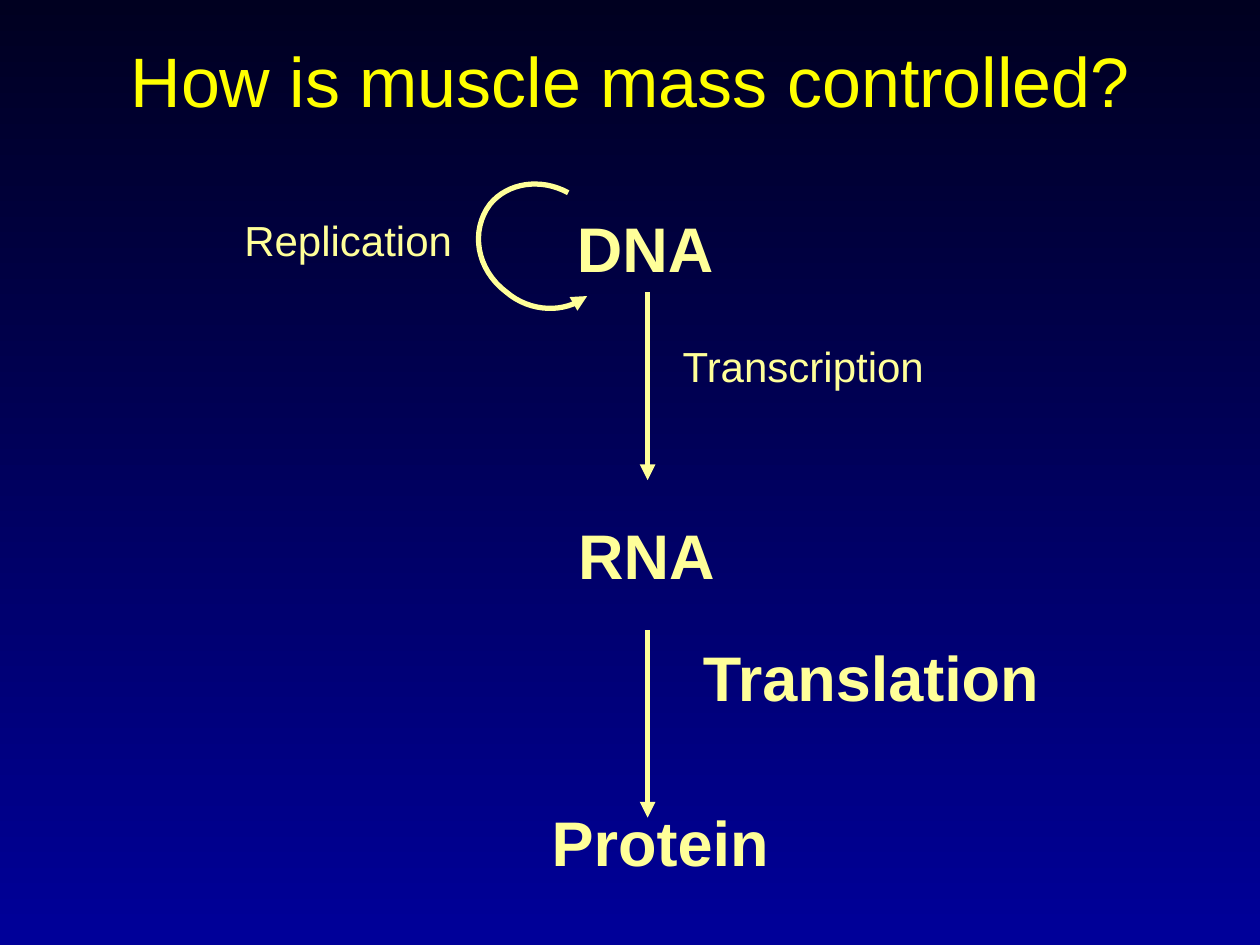
from lxml.etree import SubElement
from pptx import Presentation
from pptx.dml.color import RGBColor
from pptx.enum.shapes import MSO_CONNECTOR
from pptx.enum.text import MSO_ANCHOR, PP_ALIGN
from pptx.oxml.ns import qn
from pptx.util import Inches, Pt

CREAM = "FFFF99"
YELLOW = "FFFF00"


def color(hex_value):
    return RGBColor.from_string(hex_value)


def style_arrow(shape):
    """Give a connector or open outline a cream line ending in a triangle."""
    shape.line.color.rgb = color(CREAM)
    shape.line.width = Pt(3)
    SubElement(shape.line._get_or_add_ln(), qn("a:tailEnd"), type="triangle")


prs = Presentation()
prs.slide_width, prs.slide_height = Inches(10), Inches(7.5)
slide = prs.slides.add_slide(prs.slide_layouts[6])

backdrop = slide.background.fill
backdrop.gradient()
backdrop.gradient_angle = 270
for stop, shade in zip(backdrop.gradient_stops, ("000020", "000099")):
    stop.color.rgb = color(shade)

# text, left, top, width, height, size, bold, color, alignment
labels = [
    ("How is muscle mass controlled?", 0.5, 0.3, 9, 0.67, 40, False, YELLOW, PP_ALIGN.CENTER),
    ("DNA", 4.48, 1.61, 1.28, 0.7, 36, True, CREAM, PP_ALIGN.LEFT),
    ("RNA", 4.49, 4.05, 1.33, 0.7, 36, True, CREAM, PP_ALIGN.LEFT),
    ("Protein", 4.28, 6.33, 1.92, 0.7, 36, True, CREAM, PP_ALIGN.LEFT),
    ("Replication", 1.84, 1.65, 1.85, 0.5, 24, False, CREAM, PP_ALIGN.LEFT),
    ("Transcription", 5.32, 2.65, 2.13, 0.5, 24, False, CREAM, PP_ALIGN.LEFT),
    ("Translation", 5.48, 5.02, 2.89, 0.7, 36, True, CREAM, PP_ALIGN.LEFT),
]
for text, left, top, width, height, size, bold, ink, alignment in labels:
    frame = slide.shapes.add_textbox(
        Inches(left), Inches(top), Inches(width), Inches(height)).text_frame
    frame.word_wrap = alignment == PP_ALIGN.CENTER
    frame.vertical_anchor = MSO_ANCHOR.MIDDLE
    paragraph = frame.paragraphs[0]
    paragraph.text = text
    paragraph.alignment = alignment
    paragraph.font.name = "Arial"
    paragraph.font.size = Pt(size)
    paragraph.font.bold = bold
    paragraph.font.color.rgb = color(ink)

# Transcription and translation arrows
for top in (2.32, 5):
    step = slide.shapes.add_connector(
        MSO_CONNECTOR.STRAIGHT, Inches(5.14), Inches(top), Inches(5.14), Inches(top + 1.49))
    style_arrow(step)
    SubElement(step._element.spPr, qn("a:effectLst"))

# Replication loop: three joined Bezier curves, sampled into short segments
loop_start = (4.51, 1.53)
curves = [
    ((4.29, 1.41), (4.03, 1.45), (3.89, 1.62)),
    ((3.73, 1.83), (3.78, 2.14), (4.02, 2.32)),
    ((4.21, 2.48), (4.48, 2.49), (4.66, 2.35)),
]
SAMPLES = 16
points = [loop_start]
for control_1, control_2, end in curves:
    start = points[-1]
    for i in range(1, SAMPLES + 1):
        t = i / SAMPLES
        points.append(tuple(
            (1 - t) ** 3 * a + 3 * (1 - t) ** 2 * t * b + 3 * (1 - t) * t ** 2 * c + t ** 3 * d
            for a, b, c, d in zip(start, control_1, control_2, end)))

# The builder rounds to whole units, so the points go in as EMU
loop_points = [(Inches(x), Inches(y)) for x, y in points]
outline = slide.shapes.build_freeform(*loop_points[0])
outline.add_line_segments(loop_points[1:], close=False)
replication_loop = outline.convert_to_shape()
replication_loop.fill.background()
replication_loop.shadow.inherit = False
style_arrow(replication_loop)

prs.save("out.pptx")
